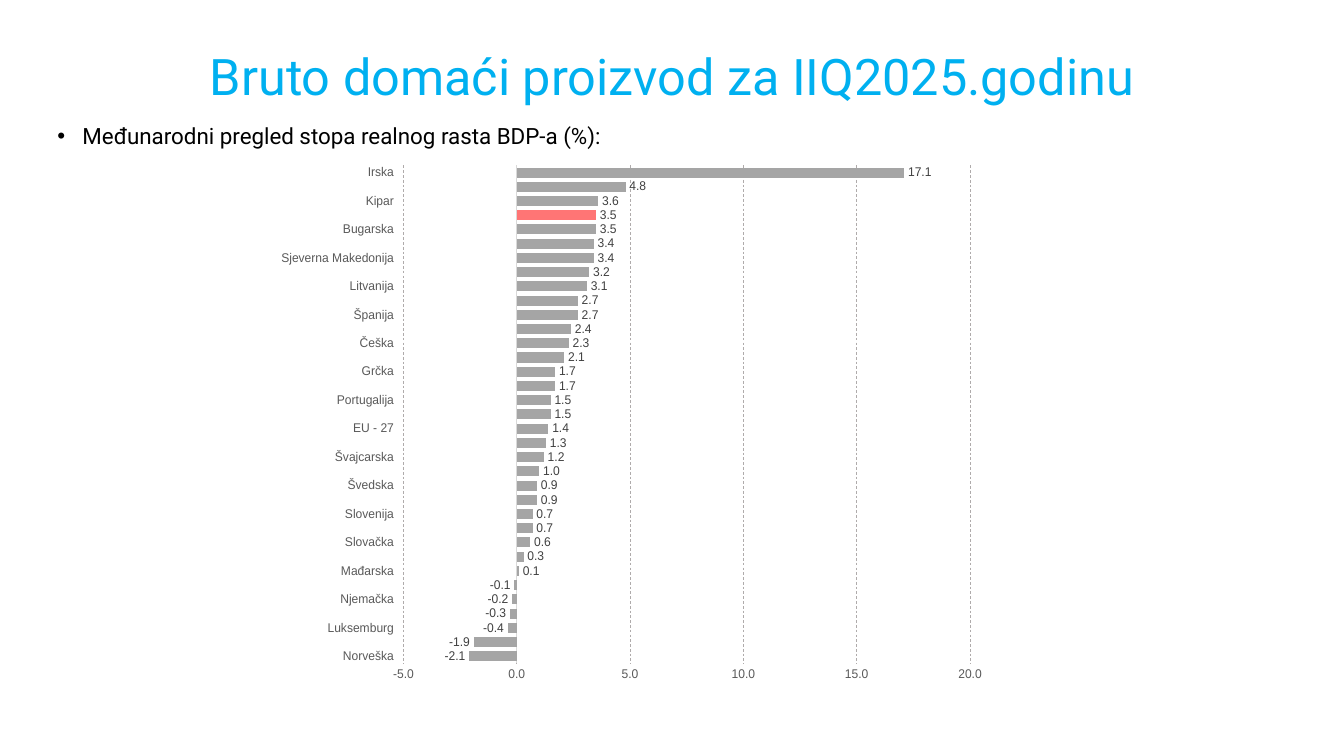
from lxml import etree
from pptx import Presentation, util as u
from pptx.chart.data import CategoryChartData
from pptx.dml.color import RGBColor
from pptx.enum import chart as kinds, dml, text
from pptx.oxml import ns, parse_xml

GROWTH = [
    ("Norveška", -2.1), ("Island", -1.9), ("Luksemburg", -0.4), ("Finska", -0.3),
    ("Njemačka", -0.2), ("Austrija", -0.1), ("Mađarska", 0.1), ("Italija", 0.3),
    ("Slovačka", 0.6), ("Francuska", 0.7), ("Slovenija", 0.7), ("Estonija", 0.9),
    ("Švedska", 0.9), ("Belgija", 1.0), ("Švajcarska", 1.2), ("Danska", 1.3),
    ("EU - 27", 1.4), ("Holandija", 1.5), ("Portugalija", 1.5), ("Letonija", 1.7),
    ("Grčka", 1.7), ("Srbija", 2.1), ("Češka", 2.3), ("Rumunija", 2.4),
    ("Španija", 2.7), ("Malta", 2.7), ("Litvanija", 3.1), ("Poljska", 3.2),
    ("Sjeverna Makedonija", 3.4), ("Hrvatska", 3.4), ("Bugarska", 3.5),
    ("Crna Gora", 3.5), ("Kipar", 3.6), ("Turska", 4.8), ("Irska", 17.1),
]
HIGHLIGHT = "Crna Gora"


def color(code):
    return RGBColor.from_string(code)


def paint(fill, code):
    fill.solid()
    fill.fore_color.rgb = color(code)


def style(font, size, code, name):
    font.size = u.Pt(size)
    font.name = name
    font.color.rgb = color(code)


def add_text(page, area, words, size, code):
    box = page.shapes.add_textbox(*map(u.Pt, area))
    box.text_frame.word_wrap = True
    para = box.text_frame.paragraphs[0]
    para.line_spacing = 0.9
    span = para.add_run()
    span.text = words
    style(span.font, size, code, "Roboto")
    return box.text_frame, para


def add_title(page, area, words):
    frame, para = add_text(page, area, words, 36, "00B0F0")
    frame.margin_left = frame.margin_top = frame.margin_right = frame.margin_bottom = 0
    frame.vertical_anchor = text.MSO_ANCHOR.BOTTOM
    para.alignment = text.PP_ALIGN.CENTER


def add_bullet(page, area, words):
    frame, para = add_text(page, area, words, 16, "000000")
    props = para._p.get_or_add_pPr()
    props.set("marL", str(u.Pt(18)))
    props.set("indent", str(-u.Pt(18)))
    etree.SubElement(props, ns.qn("a:buFont"), typeface="Arial")
    etree.SubElement(props, ns.qn("a:buChar"), char="•")


def place_plot(chart, x, y, w, h):
    area = chart._chartSpace.chart.plotArea
    for layout in area.findall(ns.qn("c:layout")):
        area.remove(layout)
    sizes = "".join(f'<c:{key} val="{value}"/>' for key, value in zip("xywh", (x, y, w, h)))
    area.insert(0, parse_xml(
        f'<c:layout {ns.nsdecls("c")}><c:manualLayout><c:layoutTarget val="inner"/>'
        f'<c:xMode val="edge"/><c:yMode val="edge"/>{sizes}</c:manualLayout></c:layout>'))


def style_axes(chart):
    for axis in (chart.category_axis, chart.value_axis):
        axis.major_tick_mark = axis.minor_tick_mark = kinds.XL_TICK_MARK.NONE
        style(axis.tick_labels.font, 9, "595959", "Arial")
    countries, rates = chart.category_axis, chart.value_axis
    countries.tick_label_position = kinds.XL_TICK_LABEL_POSITION.LOW
    countries.format.line.width = u.Pt(0.75)
    paint(countries.format.line.fill, "D9D9D9")
    rates.minimum_scale, rates.maximum_scale, rates.major_unit = -5, 20, 5
    rates.tick_labels.number_format = "0.0"
    rates.tick_labels.number_format_is_linked = False
    rates.format.line.fill.background()
    grid = rates.major_gridlines.format.line
    grid.width = u.Pt(0.5)
    paint(grid.fill, "AFABAB")
    grid.dash_style = dml.MSO_LINE.DASH


def style_bars(plot):
    plot.gap_width = 41
    plot.overlap = -27
    plot.vary_by_categories = False
    bars = plot.series[0]
    bars.invert_if_negative = False
    paint(bars.format.fill, "A5A5A5")
    marked = [country for country, rate in GROWTH].index(HIGHLIGHT)
    paint(bars.points[marked].format.fill, "FF7575")
    labels = bars.data_labels
    labels.show_value = True
    labels.position = kinds.XL_LABEL_POSITION.OUTSIDE_END
    labels.number_format = "0.0"
    labels.number_format_is_linked = False
    style(labels.font, 9, "404040", "Arial")


def add_growth_chart(page, area):
    data = CategoryChartData(number_format="0.0")
    data.categories = [country for country, rate in GROWTH]
    data.add_series("Series 1", [rate for country, rate in GROWTH])
    chart = page.shapes.add_chart(
        kinds.XL_CHART_TYPE.BAR_CLUSTERED, *map(u.Pt, area), data).chart
    chart.has_legend = False
    chart.has_title = False
    style(chart.font, 11, "000000", "Roboto")
    place_plot(chart, 0.135, 0.018, 0.833, 0.876)
    style_axes(chart)
    style_bars(chart.plots[0])


def main():
    deck = Presentation()
    deck.slide_width, deck.slide_height = u.Pt(960), u.Pt(540)
    page = deck.slides.add_slide(deck.slide_layouts[6])
    add_bullet(page, (33.84, 85.68, 828, 40.32),
               "Međunarodni pregled stopa realnog rasta BDP-a (%):")
    add_title(page, (66.24, 28.8, 828, 47.52), "Bruto domaći proizvod za IIQ2025.godinu")
    add_growth_chart(page, (200.88, 110.88, 507.6, 406.08))
    deck.save("out.pptx")


if __name__ == "__main__":
    main()
